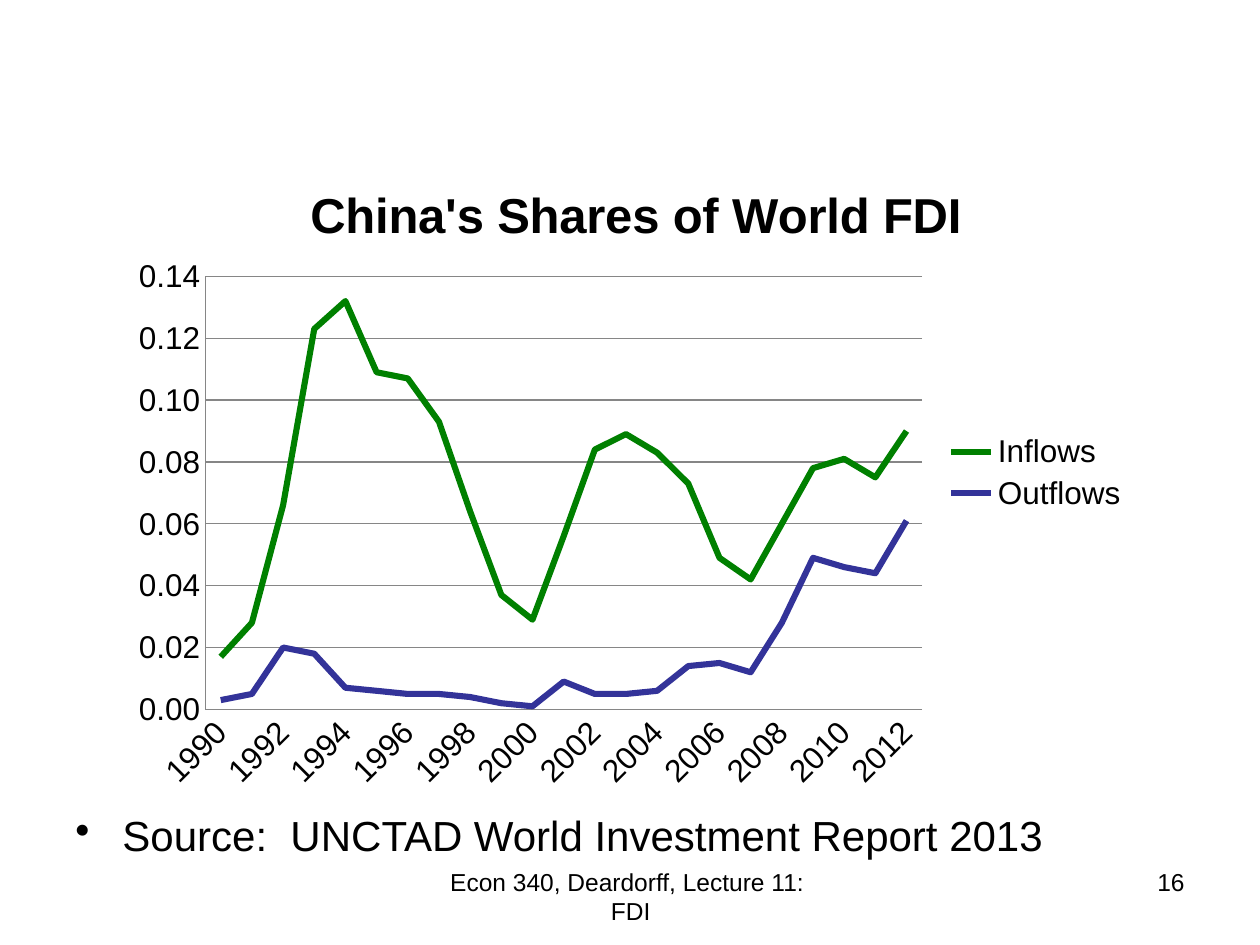
from lxml import etree
from pptx import Presentation
from pptx.chart.data import CategoryChartData
from pptx.dml.color import RGBColor
from pptx.enum import chart as ch, text
from pptx.oxml.ns import qn
from pptx.util import Cm, Pt

COLORS = {"text": "000000", "grid": "868686", "Inflows": "008000", "Outflows": "333399"}
FONT = "Arial"
TITLE = "China's Shares of World FDI"
YEARS = [str(year) for year in range(1990, 2013)]
SHARES = {
    "Inflows": [0.017, 0.028, 0.066, 0.123, 0.132, 0.109, 0.107, 0.093,
                0.064, 0.037, 0.029, 0.056, 0.084, 0.089, 0.083, 0.073,
                0.049, 0.042, 0.06, 0.078, 0.081, 0.075, 0.09],
    "Outflows": [0.003, 0.005, 0.02, 0.018, 0.007, 0.006, 0.005, 0.005,
                 0.004, 0.002, 0.001, 0.009, 0.005, 0.005, 0.006, 0.014,
                 0.015, 0.012, 0.028, 0.049, 0.046, 0.044, 0.061],
}
CHART_BOX = (2.36, 2.87, 20.65, 13.31)
TEXTS = [
    ("Econ 340, Deardorff, Lecture 11:  FDI", (8.69, 17.35, 8.05, 1.32),
     {"align": text.PP_ALIGN.CENTER}),
    ("16", (18.21, 17.35, 5.92, 1.32), {"align": text.PP_ALIGN.RIGHT}),
    ("Source:  UNCTAD World Investment Report 2013", (1.27, 16.31, 22.1, 1.24),
     {"size": 24, "bullet": True}),
]


def rgb(name):
    return RGBColor.from_string(COLORS[name])


def style_font(font, size, bold=False):
    font.name, font.size, font.bold = FONT, Pt(size), bold
    font.color.rgb = rgb("text")


def add_text(slide, content, box, size=14, align=text.PP_ALIGN.LEFT, bullet=False):
    tf = slide.shapes.add_textbox(*map(Cm, box)).text_frame
    tf.word_wrap = True
    p = tf.paragraphs[0]
    p.alignment = align
    r = p.add_run()
    r.text = content
    style_font(r.font, size)
    if bullet:
        p.line_spacing = 0.9
        ppr = p._p.get_or_add_pPr()
        ppr.set("marL", str(Cm(0.95)))
        ppr.set("indent", str(-Cm(0.95)))
        etree.SubElement(ppr, qn("a:buChar"), char="•")


def place(element, index, **values):
    for old in element.findall(qn("c:layout")):
        element.remove(old)
    layout = etree.Element(qn("c:layout"))
    manual = etree.SubElement(layout, qn("c:manualLayout"))
    for tag, value in values.items():
        etree.SubElement(manual, qn(f"c:{tag}"), val=str(value))
    element.insert(index, layout)


def add_share_chart(slide):
    data = CategoryChartData(number_format="0.00")
    data.categories = YEARS
    for name, values in SHARES.items():
        data.add_series(name, values)
    chart = slide.shapes.add_chart(ch.XL_CHART_TYPE.LINE, *map(Cm, CHART_BOX), data).chart
    style_font(chart.font, 18)

    chart.has_title = True
    tf = chart.chart_title.text_frame
    tf.text = TITLE
    style_font(tf.paragraphs[0].runs[0].font, 28, bold=True)
    chart.has_legend = True
    chart.legend.position = ch.XL_LEGEND_POSITION.RIGHT
    chart.legend.include_in_layout = False
    style_font(chart.legend.font, 18)

    for axis in (chart.category_axis, chart.value_axis):
        axis.major_tick_mark = axis.minor_tick_mark = ch.XL_TICK_MARK.NONE
        style_font(axis.tick_labels.font, 18)
        axis.format.line.color.rgb = rgb("grid")
    years, shares = chart.category_axis, chart.value_axis
    years._element.find(qn("c:txPr")).find(qn("a:bodyPr")).set("rot", "-2700000")
    skip = etree.Element(qn("c:tickLblSkip"), val="2")
    years._element.find(qn("c:noMultiLvlLbl")).addprevious(skip)
    shares.minimum_scale, shares.maximum_scale, shares.major_unit = 0, 0.14, 0.02
    shares.tick_labels.number_format = "0.00"
    shares.tick_labels.number_format_is_linked = False
    shares.major_gridlines.format.line.color.rgb = rgb("grid")

    plot = chart.plots[0]
    plot.vary_by_categories = False
    for series in plot.series:
        series.smooth = False
        series.marker.style = ch.XL_MARKER_STYLE.NONE
        series.format.line.color.rgb = rgb(series.name)
        series.format.line.width = Pt(3.5)

    place(chart.chart_title._element, 1, xMode="edge", yMode="edge", x=0.18, y=0.05)
    place(chart._chartSpace.chart.plotArea, 0, layoutTarget="inner",
          xMode="edge", yMode="edge", x=0.086, y=0.203, w=0.7, h=0.656)


def main():
    prs = Presentation()
    prs.slide_width, prs.slide_height = Cm(25.4), Cm(19.05)
    slide = prs.slides.add_slide(prs.slide_layouts[6])
    for content, box, options in TEXTS:
        add_text(slide, content, box, **options)
    add_share_chart(slide)
    prs.save("out.pptx")


if __name__ == "__main__":
    main()
